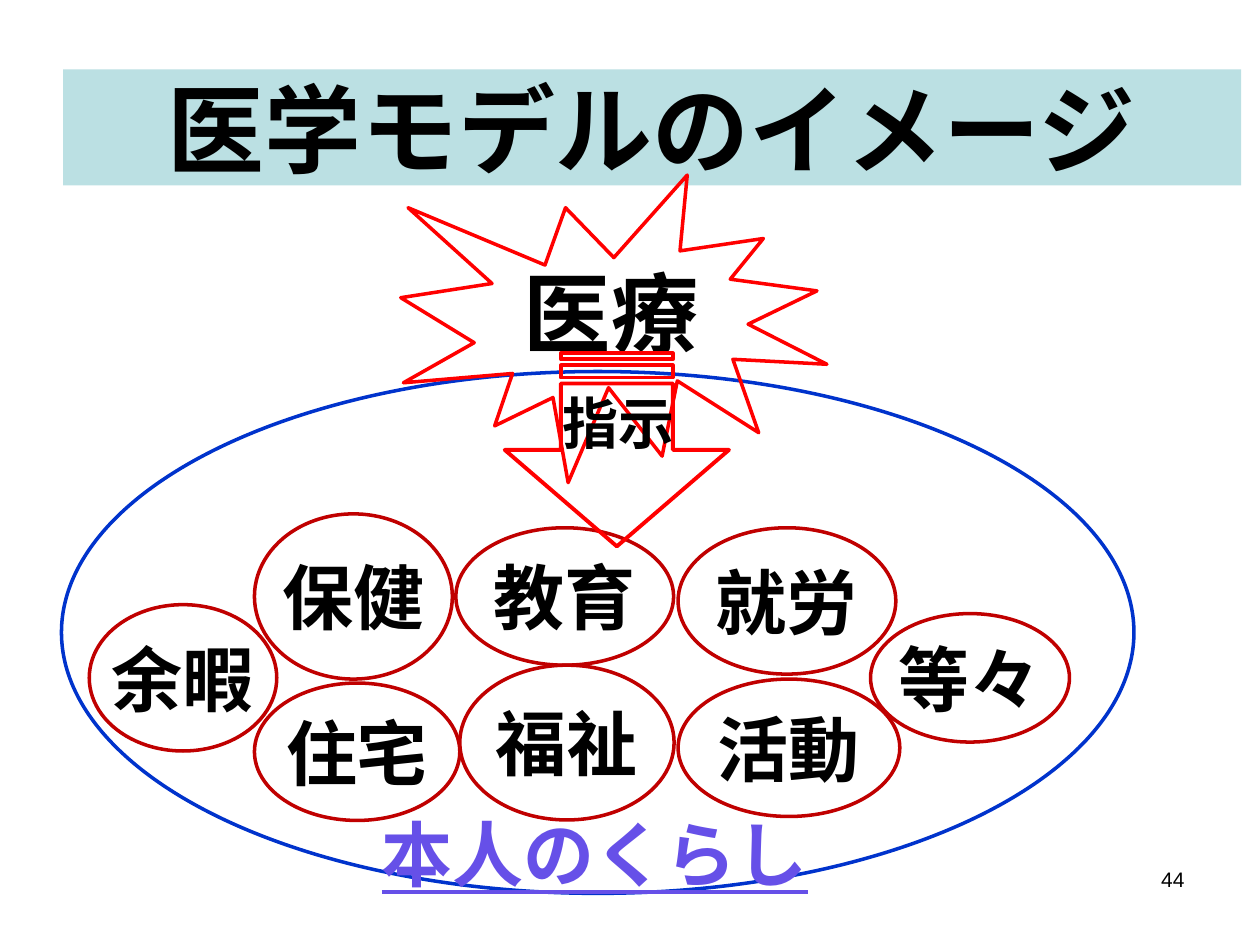
from pptx import Presentation
from pptx.dml.color import RGBColor
from pptx.enum.shapes import MSO_SHAPE
from pptx.enum.text import MSO_ANCHOR, MSO_AUTO_SIZE, PP_ALIGN
from pptx.util import Cm, Pt

OVAL = MSO_SHAPE.OVAL
BURST = MSO_SHAPE.EXPLOSION1
STRIPED_ARROW = MSO_SHAPE.STRIPED_RIGHT_ARROW
MIDDLE = MSO_ANCHOR.MIDDLE
NO_AUTOFIT = MSO_AUTO_SIZE.NONE
LEFT, CENTER, RIGHT = PP_ALIGN.LEFT, PP_ALIGN.CENTER, PP_ALIGN.RIGHT

COLORS = {
    "band": "BBE0E3",
    "text": "000000",
    "service": "C00000",
    "life": "0033CC",
    "medical": "FF0000",
    "life_label": "6650E8",
}

prs = Presentation()
prs.slide_width, prs.slide_height = Cm(25.4), Cm(19.05)
slide = prs.slides.add_slide(prs.slide_layouts[5])


def add_outline(kind, box, color, width=2):
    outline = slide.shapes.add_shape(kind, *map(Cm, box))
    outline.shadow.inherit = False
    outline.fill.background()
    outline.line.color.rgb = RGBColor.from_string(COLORS[color])
    outline.line.width = Pt(width)
    return outline


def write(holder, text, size, align=CENTER, color="text", bold=True, wrap=True):
    frame = holder.text_frame
    frame.word_wrap = wrap
    frame.text = text
    paragraph = frame.paragraphs[0]
    paragraph.alignment = align
    paragraph.font.name = "Arial"
    paragraph.font.size = Pt(size)
    paragraph.font.bold = bold
    paragraph.font.color.rgb = RGBColor.from_string(COLORS[color])
    return paragraph


title = slide.shapes.title
title.left, title.top, title.width, title.height = Cm(1.27), Cm(1.4), Cm(23.75), Cm(2.34)
title.fill.solid()
title.fill.fore_color.rgb = RGBColor.from_string(COLORS["band"])
write(title, "医学モデルのイメージ", 55.4)
title.text_frame.vertical_anchor = MIDDLE
title.text_frame.auto_size = NO_AUTOFIT

page_number = slide.shapes.add_textbox(Cm(18.21), Cm(17.35), Cm(5.92), Cm(1.32))
write(page_number, "44", 12, RIGHT, bold=False)

services = [
    ("福祉", 9.27, 13.41, 4.32, 3.12),
    ("等々", 17.55, 12.37, 4.01, 2.59),
    ("余暇", 1.8, 12.19, 3.78, 2.95),
    ("住宅", 5.13, 13.77, 4.14, 2.77),
    ("教育", 9.19, 10.64, 4.39, 2.77),
    ("保健", 5.13, 10.36, 3.99, 3.33),
    ("就労", 13.67, 10.64, 4.39, 2.95),
    ("活動", 13.67, 13.69, 4.47, 2.77),
]
for service, *box in services:
    write(add_outline(OVAL, box, "service"), service, 40.6, wrap=False)

add_outline(OVAL, (1.24, 7.49, 21.62, 10.52), "life")

medical_care = add_outline(BURST, (8.08, 3.53, 8.59, 6.2), "medical")
write(medical_care, "医療", 49.9)
medical_care.text_frame.margin_top = 0
medical_care.text_frame.margin_bottom = Cm(0.3)

life_label = slide.shapes.add_textbox(Cm(7.06), Cm(16.21), Cm(9.86), Cm(1.98))
write(life_label, "本人のくらし", 40.6, color="life_label").font.underline = True

instruction_arrow = add_outline(STRIPED_ARROW, (10.49, 6.81, 3.89, 4.52), "medical", 2.25)
instruction_arrow.rotation = 90

instruction = slide.shapes.add_textbox(Cm(11.1), Cm(7.7), Cm(3.61), Cm(1.63))
write(instruction, "指示", 32, LEFT)

prs.save("out.pptx")
